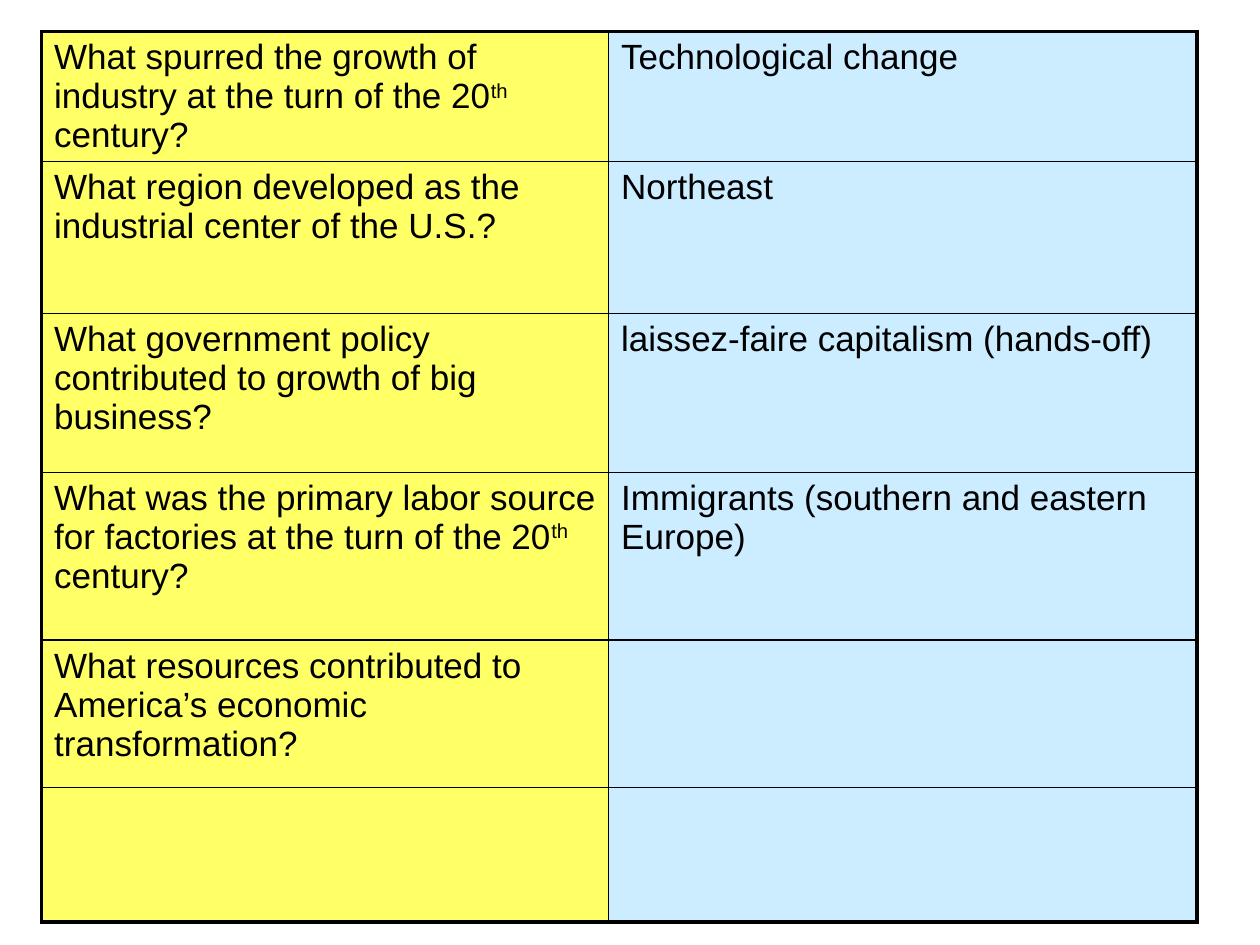
from dataclasses import dataclass

from lxml.etree import SubElement
from pptx import Presentation
from pptx.dml.color import RGBColor as RGB
from pptx.oxml.ns import qn
from pptx.util import Inches, Pt


@dataclass(frozen=True)
class Theme:
    question: str = "FFFF66"
    answer: str = "CCECFF"
    ink: str = "000000"
    font: str = "Arial"
    size: int = 20
    inner: float = 1
    outer: float = 2.25


theme = Theme()

# Each cell is a list of runs; "th" is set as superscript
rows = [
    (["What spurred the growth of industry at the turn of the 20", "th", " century?"],
     ["Technological change"]),
    (["What region developed as the industrial center of the U.S.?"],
     ["Northeast"]),
    (["What government policy contributed to growth of big business?"],
     ["laissez-faire capitalism (hands-off)"]),
    (["What was the primary labor source for factories at the turn of the 20", "th", " century?"],
     ["Immigrants (southern and eastern Europe)"]),
    (["What resources contributed to America’s economic transformation?"], []),
    ([], []),
]
col_widths = [4.5, 4.67]
row_heights = [0.95, 1.21, 1.26, 1.33, 1.17, 1.07]


def add_border(cell, side, width):
    ln = SubElement(cell._tc.get_or_add_tcPr(), qn(f"a:ln{side}"), w=str(Pt(width)))
    fill = SubElement(ln, qn("a:solidFill"))
    SubElement(fill, qn("a:srgbClr"), val=theme.ink)


# Slide
prs = Presentation()
prs.slide_width, prs.slide_height = Inches(10), Inches(7.5)
s = prs.slides.add_slide(prs.slide_layouts[6])

# Question and answer table
table = s.shapes.add_table(
    len(rows), len(col_widths), Inches(0.33), Inches(0.25),
    Inches(sum(col_widths)), Inches(sum(row_heights))).table
table.first_row = table.horz_banding = False
for col, width in zip(table.columns, col_widths):
    col.width = Inches(width)
for row, height in zip(table.rows, row_heights):
    row.height = Inches(height)

last_row, last_col = len(rows) - 1, len(col_widths) - 1
for i, row in enumerate(rows):
    for j, runs in enumerate(row):
        cell = table.cell(i, j)

        # Heavy frame outside, thin rules inside; borders precede the fill
        edges = {"L": j == 0, "R": j == last_col, "T": i == 0, "B": i == last_row}
        for side, on_frame in edges.items():
            add_border(cell, side, theme.outer if on_frame else theme.inner)
        cell.fill.solid()
        cell.fill.fore_color.rgb = RGB.from_string(theme.answer if j else theme.question)

        # Text
        p = cell.text_frame.paragraphs[0]
        for text in runs:
            r = p.add_run()
            r.text = text
            r.font.name = theme.font
            r.font.size = Pt(theme.size)
            r.font.color.rgb = RGB.from_string(theme.ink)
            if text == "th":
                r.font._element.set("baseline", "30000")

prs.save("out.pptx")
